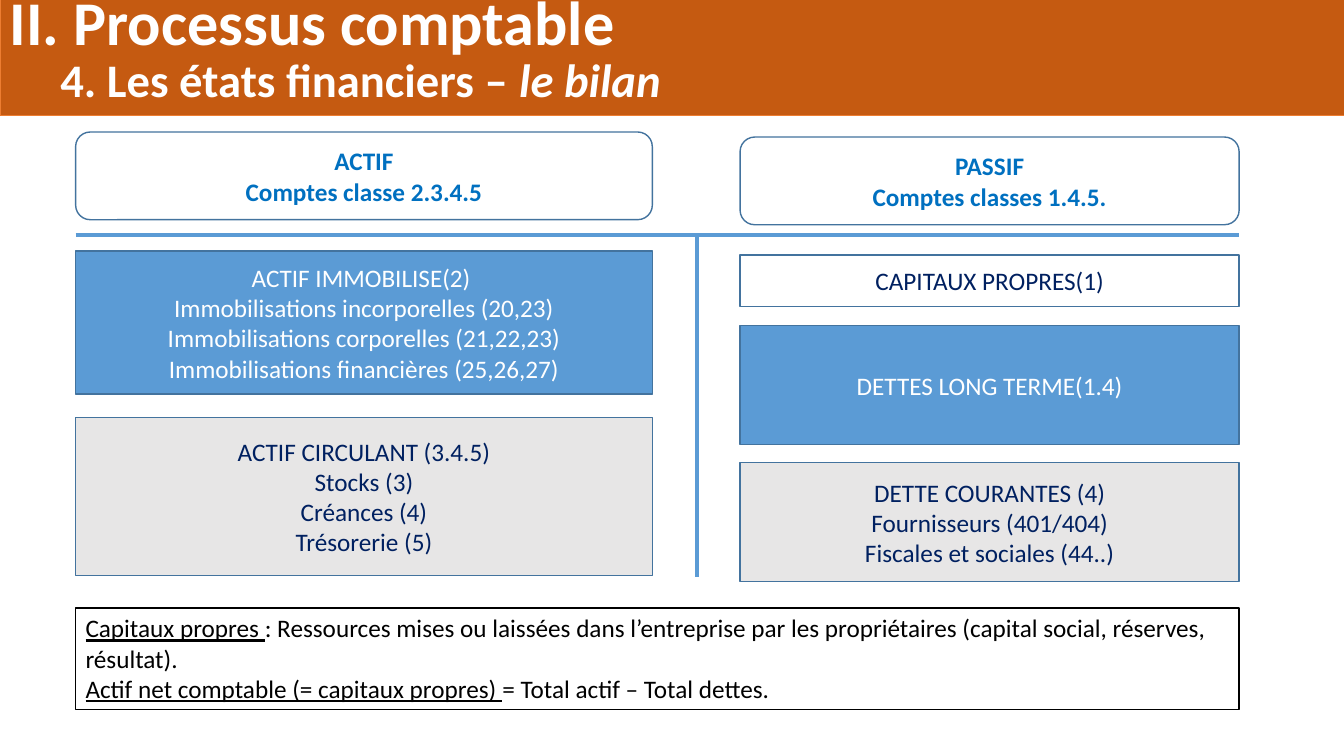
import pptx
import pptx.util
import pptx.dml.color
import pptx.enum.shapes
import pptx.enum.text
import lxml.etree
from dataclasses import dataclass
from pptx.util import Inches

SHAPES = pptx.enum.shapes.MSO_SHAPE
ANCHORS = pptx.enum.text.MSO_ANCHOR
ALIGNMENTS = pptx.enum.text.PP_ALIGN


@dataclass(frozen=True)
class Theme:
    font: str = "Calibri"
    white: str = "FFFFFF"
    black: str = "000000"
    blue: str = "5B9BD5"
    outline: str = "43739E"
    gray: str = "E7E6E6"
    navy: str = "002060"
    heading: str = "0070C0"
    banner: str = "C55A11"
    banner_outline: str = "ED7D31"
    body_size: float = 18
    title_size: float = 44.4
    subtitle_size: float = 33.3


class BalanceSheetSlide:
    def __init__(self, slide, theme):
        self.slide = slide
        self.theme = theme

    def color(self, value):
        return pptx.dml.color.RGBColor.from_string(value)

    def add_run(self, paragraph, text, color, size=None, bold=False, italic=False, underline=False):
        run = paragraph.add_run()
        run.text = text
        run.font.name = self.theme.font
        run.font.size = pptx.util.Pt(size or self.theme.body_size)
        run.font.color.rgb = self.color(color)
        run.font.bold = bold
        run.font.italic = italic
        run.font.underline = underline

    def add_box(self, bounds, fill, outline, kind=SHAPES.RECTANGLE, width=1, anchor=ANCHORS.TOP):
        shape = self.slide.shapes.add_shape(kind, *map(Inches, bounds))
        shape.shadow.inherit = False
        if fill:
            shape.fill.solid()
            shape.fill.fore_color.rgb = self.color(fill)
        else:
            shape.fill.background()
        shape.line.color.rgb = self.color(outline)
        shape.line.width = pptx.util.Pt(width)
        shape.text_frame.word_wrap = True
        shape.text_frame.vertical_anchor = anchor
        return shape

    def add_paragraphs(self, shape, paragraphs, color, alignment=ALIGNMENTS.LEFT, spacing=None):
        frame = shape.text_frame
        for index, runs in enumerate(paragraphs):
            paragraph = frame.add_paragraph() if index else frame.paragraphs[0]
            paragraph.alignment = alignment
            paragraph.line_spacing = spacing
            for text, style in runs:
                self.add_run(paragraph, text, color, **style)

    def add_account_box(self, bounds, lines, fill, color, kind=SHAPES.RECTANGLE, bold=False):
        shape = self.add_box(bounds, fill, self.theme.outline, kind, anchor=ANCHORS.MIDDLE)
        paragraphs = [[(line, {"bold": bold})] for line in lines]
        self.add_paragraphs(shape, paragraphs, color, ALIGNMENTS.CENTER)

    def add_heading(self, bounds, lines):
        self.add_account_box(bounds, lines, None, self.theme.heading, SHAPES.ROUNDED_RECTANGLE, True)

    def add_line(self, *ends):
        connector = self.slide.shapes.add_connector(
            pptx.enum.shapes.MSO_CONNECTOR.STRAIGHT, *map(Inches, ends))
        connector.line.color.rgb = self.color(self.theme.blue)
        connector.line.width = pptx.util.Pt(3)
        properties = connector._element.spPr
        lxml.etree.SubElement(properties, pptx.oxml.ns.qn("a:effectLst"))

    def add_definitions(self, bounds, definitions):
        shape = self.add_box(bounds, self.theme.white, self.theme.black)
        paragraphs = [[(term, {"underline": True}), (meaning, {})] for term, meaning in definitions]
        self.add_paragraphs(shape, paragraphs, self.theme.black)

    def add_banner(self, bounds, title, subtitle, emphasis):
        shape = self.add_box(bounds, self.theme.banner, self.theme.banner_outline, width=0.5)
        large = {"size": self.theme.title_size, "bold": True}
        medium = {"size": self.theme.subtitle_size, "bold": True}
        paragraphs = [
            [(title, large)],
            [("\t", large), (subtitle, medium), (emphasis, {**medium, "italic": True})],
        ]
        self.add_paragraphs(shape, paragraphs, self.theme.white, spacing=0.7)


def main():
    presentation = pptx.Presentation()
    presentation.slide_width = Inches(13.33)
    presentation.slide_height = Inches(7.5)
    theme = Theme()
    sheet = BalanceSheetSlide(presentation.slides.add_slide(presentation.slide_layouts[6]), theme)

    left, left_width = 0.75, 5.72
    right, right_width = 7.34, 4.95
    edge = right + right_width
    rule_top, middle = 2.33, 6.91

    sheet.add_line(left, rule_top, edge, rule_top)
    sheet.add_line(middle, rule_top, middle, 5.72)

    sheet.add_heading((left, 1.31, left_width, 0.87), ["ACTIF", "Comptes classe 2.3.4.5"])
    sheet.add_heading((right, 1.36, right_width, 0.87), ["PASSIF", "Comptes classes 1.4.5."])

    sheet.add_account_box((left, 2.49, left_width, 1.42), [
        "ACTIF IMMOBILISE(2) ",
        "Immobilisations incorporelles (20,23)",
        "Immobilisations corporelles (21,22,23)",
        "Immobilisations financières (25,26,27)",
    ], theme.blue, theme.white)
    sheet.add_account_box((left, 4.14, left_width, 1.57), [
        "ACTIF CIRCULANT (3.4.5)", "Stocks (3)", "Créances (4)", "Trésorerie (5)",
    ], theme.gray, theme.navy)

    sheet.add_account_box((right, 2.53, right_width, 0.51), ["CAPITAUX PROPRES(1)"],
                          theme.white, theme.navy)
    sheet.add_account_box((right, 3.23, right_width, 1.18), ["DETTES LONG TERME(1.4)"],
                          theme.blue, theme.white)
    sheet.add_account_box((right, 4.59, right_width, 1.18), [
        "DETTE COURANTES (4)", "Fournisseurs (401/404)", "Fiscales et sociales (44..)",
    ], theme.gray, theme.navy)

    sheet.add_definitions((left, 6.03, edge - left, 1.01), [
        ("Capitaux propres ", ": Ressources mises ou laissées dans l’entreprise par les "
                              "propriétaires (capital social, réserves, résultat)."),
        ("Actif net comptable (= capitaux propres) ", "= Total actif – Total dettes."),
    ])
    sheet.add_banner((0, -0.01, 13.33, 1.16), "II. Processus comptable",
                     "4. Les états financiers – ", "le bilan")
    presentation.save("out.pptx")


if __name__ == "__main__":
    main()
